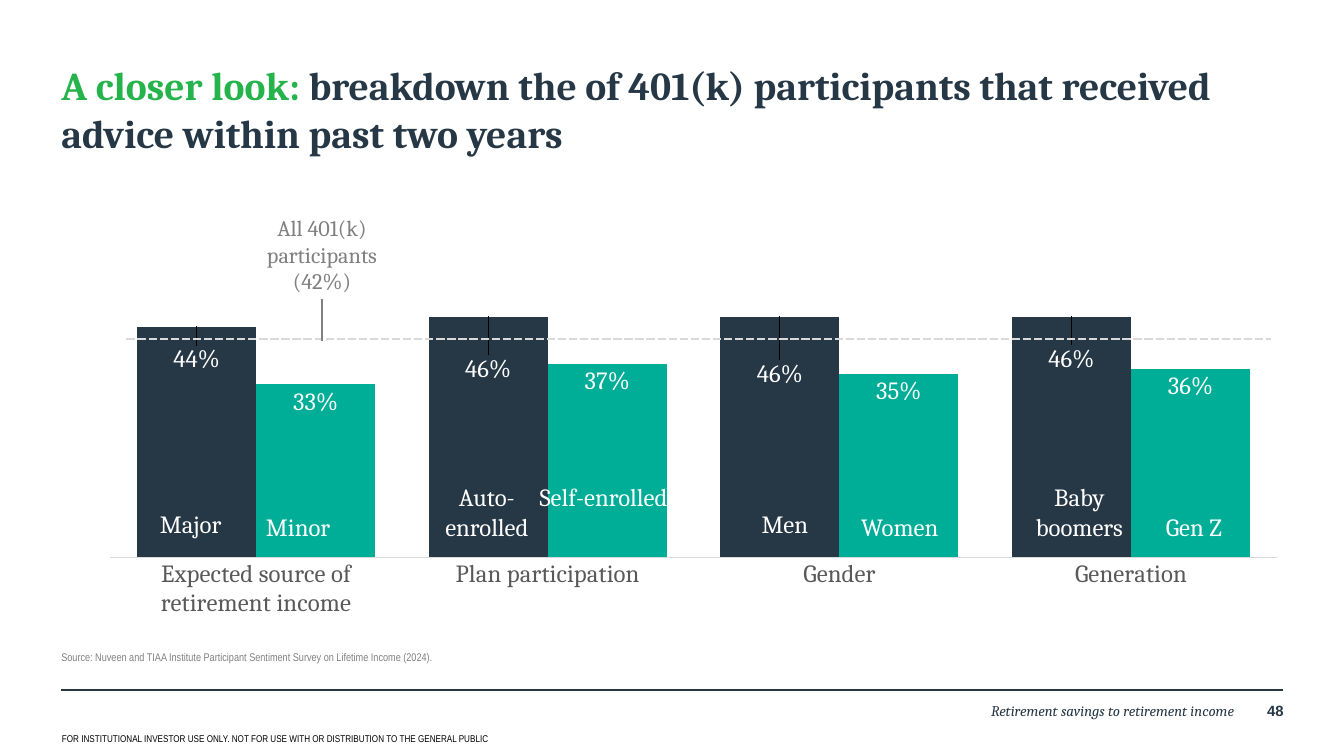
import pptx
import pptx.chart.data
import pptx.dml.color
import pptx.enum.chart
import pptx.enum.dml
import pptx.enum.shapes
import pptx.enum.text
import pptx.oxml
import pptx.oxml.ns
import pptx.util

Cm = pptx.util.Cm
Pt = pptx.util.Pt
RGB = pptx.dml.color.RGBColor
Align = pptx.enum.text.PP_ALIGN
Anchor = pptx.enum.text.MSO_ANCHOR

NAVY = RGB(0x26, 0x37, 0x46)
GREEN = RGB(0x25, 0xB3, 0x4B)
TEAL = RGB(0x00, 0xAD, 0x97)
GREY = RGB(0x80, 0x80, 0x80)
DARK = RGB(0x59, 0x59, 0x59)
PALE = RGB(0xD9, 0xD9, 0xD9)
WHITE = RGB(0xFF, 0xFF, 0xFF)
BLACK = RGB(0, 0, 0)

SERIF = "Cambria"
NARROW = "Arial Narrow"

LEFT = 1.75
WIDTH = 34.9

GROUPS = {
    "Expected source of retirement income": (0.44, 0.33),
    "Plan participation": (0.46, 0.37),
    "Gender": (0.46, 0.35),
    "Generation": (0.46, 0.36),
}
# Downward shift of each navy value label, as a share of chart height
SHIFTS = (0.03, 0.07, 0.08, 0.05)

# Bar names: text, left, top
NAMES = (
    ("Major", 3.58, 14.53),
    ("Minor", 6.65, 14.61),
    ("Auto-enrolled", 12.04, 13.77),
    ("Self-enrolled", 15.37, 13.77),
    ("Men", 20.55, 14.53),
    ("Women", 23.83, 14.61),
    ("Baby boomers", 28.96, 13.77),
    ("Gen Z", 32.23, 14.61),
)


def style(font, size, color, face=SERIF, bold=False, italic=False):
    font.name = face
    font.size = Pt(size)
    font.color.rgb = color
    font.bold = bold
    font.italic = italic


def fit(frame, anchor=Anchor.TOP):
    frame.word_wrap = True
    frame.auto_size = pptx.enum.text.MSO_AUTO_SIZE.NONE
    frame.vertical_anchor = anchor
    frame.margin_left = frame.margin_right = 0
    frame.margin_top = frame.margin_bottom = 0


def place(shape, x, y, w, h):
    shape.left, shape.top = Cm(x), Cm(y)
    shape.width, shape.height = Cm(w), Cm(h)


def add_text(slide, text, box, size, color, align=Align.LEFT, **look):
    shape = slide.shapes.add_textbox(*map(Cm, box))
    fit(shape.text_frame)
    para = shape.text_frame.paragraphs[0]
    para.text = text
    para.alignment = align
    style(para.runs[0].font, size, color, **look)


def add_line(slide, x1, y1, x2, y2, color, width, dash=None):
    line = slide.shapes.add_connector(
        pptx.enum.shapes.MSO_CONNECTOR.STRAIGHT, Cm(x1), Cm(y1), Cm(x2), Cm(y2))
    line.line.color.rgb = color
    line.line.width = Pt(width)
    if dash:
        line.line.dash_style = dash
    props = line._element.spPr
    props.append(props.makeelement(pptx.oxml.ns.qn("a:effectLst"), {}))


def set_title(slide):
    title = slide.shapes.title
    place(title, LEFT, 1.75, WIDTH, 2.87)
    fit(title.text_frame)
    para = title.text_frame.paragraphs[0]
    para.alignment = Align.LEFT
    parts = (
        ("A closer look: ", GREEN),
        ("breakdown the of 401(k) participants that received "
         "advice within past two years", NAVY),
    )
    for text, color in parts:
        run = para.add_run()
        run.text = text
        style(run.font, 32, color, bold=True)


def set_source(slide):
    body = slide.placeholders[1]
    place(body, LEFT, 17.91, WIDTH, 1.04)
    fit(body.text_frame, Anchor.BOTTOM)
    para = body.text_frame.paragraphs[0]
    para.text = ("Source: Nuveen and TIAA Institute Participant Sentiment "
                 "Survey on Lifetime Income (2024).")
    props = para._p.get_or_add_pPr()
    props.set("marL", "0")
    props.set("indent", "0")
    props.append(props.makeelement(pptx.oxml.ns.qn("a:buNone"), {}))
    para.space_before = Pt(0)
    style(para.runs[0].font, 9, GREY, NARROW)


def layout(**values):
    items = "".join(f'<c:{key} val="{val}"/>' for key, val in values.items())
    return pptx.oxml.parse_xml(
        f'<c:layout {pptx.oxml.ns.nsdecls("c")}>'
        f"<c:manualLayout>{items}</c:manualLayout></c:layout>")


def set_label(label):
    style(label.font, 20, WHITE)
    label.position = pptx.enum.chart.XL_LABEL_POSITION.INSIDE_END


def add_chart(slide):
    data = pptx.chart.data.CategoryChartData(number_format="0%")
    data.categories = list(GROUPS)
    for num, vals in enumerate(zip(*GROUPS.values()), 1):
        data.add_series(f"Series {num}", vals)
    chart = slide.shapes.add_chart(
        pptx.enum.chart.XL_CHART_TYPE.COLUMN_CLUSTERED,
        Cm(2.46), Cm(3.68), Cm(34.7), Cm(14.22), data).chart
    chart.has_title = chart.has_legend = False
    style(chart.font, 10, BLACK)

    # Axes
    axis = chart.category_axis
    axis.major_tick_mark = pptx.enum.chart.XL_TICK_MARK.NONE
    axis.format.line.color.rgb = PALE
    axis.format.line.width = Pt(0.75)
    style(axis.tick_labels.font, 20, DARK)
    scale = chart.value_axis
    scale.minimum_scale, scale.maximum_scale = 0, 0.8
    scale.has_major_gridlines = False
    scale.visible = False

    # Bars and value labels
    plot = chart.plots[0]
    plot.gap_width, plot.overlap = 45, 0
    plot.vary_by_categories = False
    for series, color in zip(plot.series, (NAVY, TEAL)):
        series.format.fill.solid()
        series.format.fill.fore_color.rgb = color
        labels = series.data_labels
        labels.show_value = True
        labels.number_format = "0%"
        labels.number_format_is_linked = False
        set_label(labels)
    for num, shift in enumerate(SHIFTS):
        label = plot.series[0].points[num].data_label
        set_label(label)
        label._get_or_add_dLbl().insert(1, layout(x=0, y=shift))

    # Plot area
    area = chart._chartSpace.chart.plotArea
    for old in area.findall(pptx.oxml.ns.qn("c:layout")):
        area.remove(old)
    area.insert(0, layout(layoutTarget="inner", xMode="edge", yMode="edge",
                          x=0.02, y=0.02, w=0.96, h=0.84))


def add_footer(slide):
    add_line(slide, LEFT, 19.71, 36.63, 19.71, NAVY, 2)
    add_text(slide, "48", (35.64, 20.04, 1.02, 0.84), 12, NAVY,
             Align.RIGHT, face="Arial", bold=True)
    add_text(slide, "Retirement savings to retirement income",
             (13.51, 20.04, 21.74, 1.02), 12, NAVY, Align.RIGHT, italic=True)
    add_text(slide, "FOR INSTITUTIONAL INVESTOR USE ONLY. NOT FOR USE WITH "
             "OR DISTRIBUTION TO THE GENERAL PUBLIC",
             (1.77, 20.93, 27.5, 0.4), 8, BLACK, face=NARROW)


def main():
    deck = pptx.Presentation()
    deck.slide_width, deck.slide_height = Cm(38.38), Cm(21.59)
    slide = deck.slides.add_slide(deck.slide_layouts[1])
    add_footer(slide)
    set_title(slide)
    set_source(slide)
    add_chart(slide)
    for text, x, y in NAMES:
        add_text(slide, text, (x, y, 3.73, 0.86), 20, WHITE, Align.CENTER)

    # Average across all participants
    add_line(slide, 3.61, 9.68, 36.3, 9.68, PALE, 2.25,
             pptx.enum.dml.MSO_LINE.SQUARE_DOT)
    add_text(slide, "All 401(k) participants (42%)",
             (7.29, 6.12, 3.81, 2.54), 18, GREY, Align.CENTER)
    add_line(slide, 9.19, 8.53, 9.19, 9.73, GREY, 1.5)
    deck.save("out.pptx")


if __name__ == "__main__":
    main()
